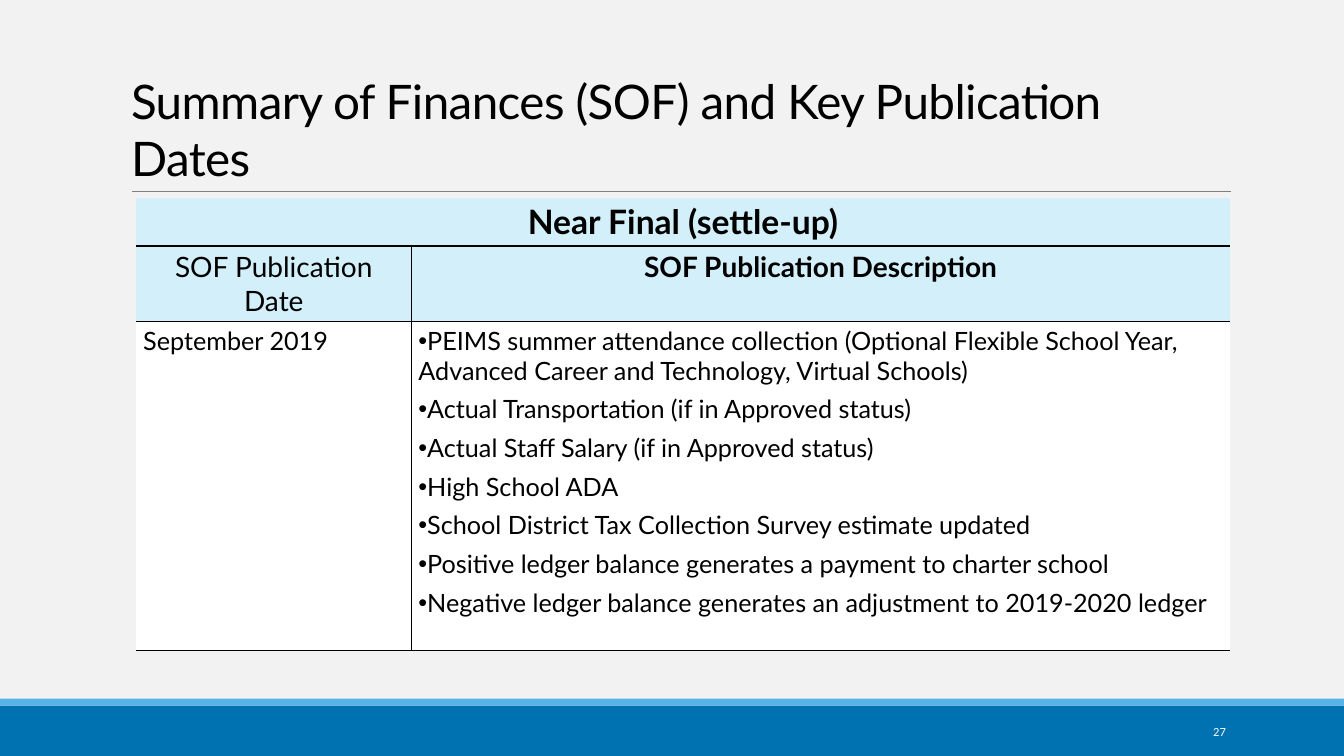
from dataclasses import dataclass

from lxml import etree
from pptx import Presentation
from pptx.dml.color import RGBColor
from pptx.enum.shapes import MSO_CONNECTOR, MSO_SHAPE
from pptx.enum.text import MSO_ANCHOR, MSO_AUTO_SIZE, PP_ALIGN
from pptx.oxml.ns import qn
from pptx.util import Inches, Pt

LEFT, MID, RIGHT = PP_ALIGN.LEFT, PP_ALIGN.CENTER, PP_ALIGN.RIGHT
LOW, CENTER = MSO_ANCHOR.BOTTOM, MSO_ANCHOR.MIDDLE
FIXED = MSO_AUTO_SIZE.NONE
RECT, LINE = MSO_SHAPE.RECTANGLE, MSO_CONNECTOR.STRAIGHT

WIDE, HIGH = Inches(13.33), Inches(7.5)
FACE = "Lato"
BLACK, WHITE, PALE = "000000", "FFFFFF", "D2EFFA"
PLAIN = "{2D5ABB26-0587-4C30-8999-92F81FD0307C}"
COLS = (20.48, 60.9)
ROWS = (6.27, 5.6, 43.6)


@dataclass
class Bar:
    top: float
    high: float
    fill: str


@dataclass
class Entry:
    row: int
    col: int
    text: str
    size: float
    fill: str
    edges: str
    bold: bool = False
    align: PP_ALIGN = MID
    dots: bool = False


BARS = (Bar(93.33, 6.67, "0072B2"), Bar(92.4, 0.93, "56B4E9"))

ITEMS = (
    "PEIMS summer attendance collection (Optional Flexible School Year, "
    "Advanced Career and Technology, Virtual Schools)",
    "Actual Transportation (if in Approved status)",
    "Actual Staff Salary (if in Approved status)",
    "High School ADA",
    "School District Tax Collection Survey estimate updated",
    "Positive ledger balance generates a payment to charter school",
    "Negative ledger balance generates an adjustment to 2019-2020 ledger",
)

CELLS = (
    Entry(0, 0, "Near Final (settle-up)", 24, PALE, "B", True),
    Entry(0, 1, "", 24, PALE, "B"),
    Entry(1, 0, "SOF Publication Date", 20, PALE, "RTB"),
    Entry(1, 1, "SOF Publication Description", 20, PALE, "LTB", True),
    Entry(2, 0, "September 2019", 18, WHITE, "RTB", align=LEFT),
    Entry(2, 1, "\n".join(ITEMS), 18, WHITE, "LTB", align=LEFT, dots=True),
)


def across(share: float) -> int:
    return round(WIDE * share / 100)


def down(share: float) -> int:
    return round(HIGH * share / 100)


def box(x: float, y: float, w: float, h: float) -> tuple:
    return across(x), down(y), across(w), down(h)


def tint(code: str) -> RGBColor:
    return RGBColor.from_string(code)


def style(para, size: float, color: str, align: PP_ALIGN, bold: bool = False) -> None:
    para.alignment = align
    for run in para.runs:
        font = run.font
        font.name, font.size, font.bold = FACE, Pt(size), bold
        font.color.rgb = tint(color)


def draw_bar(slide, bar: Bar) -> None:
    shape = slide.shapes.add_shape(RECT, *box(0, bar.top, 100, bar.high))
    shape.shadow.inherit = False
    shape.fill.solid()
    shape.fill.fore_color.rgb = tint(bar.fill)
    shape.line.fill.background()


def draw_rule(slide) -> None:
    y = down(25.33)
    rule = slide.shapes.add_connector(LINE, across(9.83), y, across(91.58), y)
    rule.line.color.rgb = tint("808080")
    rule.line.width = Pt(0.5)
    etree.SubElement(rule._element.spPr, qn("a:effectLst"))


def draw_title(slide) -> None:
    title = slide.shapes.title
    title.left, title.top, title.width, title.height = box(9, 4.13, 82.5, 21.2)
    frame = title.text_frame
    frame.text = "Summary of Finances (SOF) and Key Publication Dates"
    frame.word_wrap, frame.auto_size = True, FIXED
    frame.vertical_anchor = LOW
    para = frame.paragraphs[0]
    style(para, 34, BLACK, LEFT)
    para.runs[0].font._element.set("spc", "-40")


def draw_page(slide) -> None:
    frame = slide.shapes.add_textbox(*box(81.23, 94.13, 10.73, 5.33)).text_frame
    frame.text = "27"
    frame.word_wrap = True
    frame.vertical_anchor = CENTER
    style(frame.paragraphs[0], 7.9, WHITE, RIGHT)


def add_edges(cell, edges: str) -> None:
    props = cell._tc.get_or_add_tcPr()
    for side in edges:
        line = etree.SubElement(props, qn(f"a:ln{side}"), w=str(Pt(1)))
        fill = etree.SubElement(line, qn("a:solidFill"))
        etree.SubElement(fill, qn("a:srgbClr"), val=BLACK)


def add_dot(para) -> None:
    para.level = 1
    props = para._p.get_or_add_pPr()
    props.set("marL", "0")
    props.set("indent", str(Inches(-0.31)))
    etree.SubElement(props, qn("a:buFont"), typeface="Arial")
    etree.SubElement(props, qn("a:buChar"), char="•")


def fill_cell(cell, entry: Entry) -> None:
    add_edges(cell, entry.edges)
    cell.fill.solid()
    cell.fill.fore_color.rgb = tint(entry.fill)
    cell.margin_left = cell.margin_right = Inches(0.07)
    cell.margin_top = cell.margin_bottom = Inches(0.04)
    if not entry.text:
        return
    cell.text_frame.text = entry.text
    for index, para in enumerate(cell.text_frame.paragraphs):
        if entry.dots:
            add_dot(para)
        if index:
            para.space_before = Pt(6)
        style(para, entry.size, BLACK, entry.align, entry.bold)


def draw_table(slide) -> None:
    place = box(10.13, 26.13, sum(COLS), sum(ROWS))
    table = slide.shapes.add_table(len(ROWS), len(COLS), *place).table
    table.first_row = table.horz_banding = False
    table._tbl.tblPr.find(qn("a:tableStyleId")).text = PLAIN
    for col, share in zip(table.columns, COLS):
        col.width = across(share)
    for row, share in zip(table.rows, ROWS):
        row.height = down(share)
    table.cell(0, 0).merge(table.cell(0, 1))
    for entry in CELLS:
        fill_cell(table.cell(entry.row, entry.col), entry)


def main() -> None:
    deck = Presentation()
    deck.slide_width, deck.slide_height = WIDE, HIGH
    slide = deck.slides.add_slide(deck.slide_layouts[5])
    back = slide.background.fill
    back.solid()
    back.fore_color.rgb = tint("F2F2F2")
    for bar in BARS:
        draw_bar(slide, bar)
    draw_rule(slide)
    draw_title(slide)
    draw_page(slide)
    draw_table(slide)
    deck.save("out.pptx")


if __name__ == "__main__":
    main()
